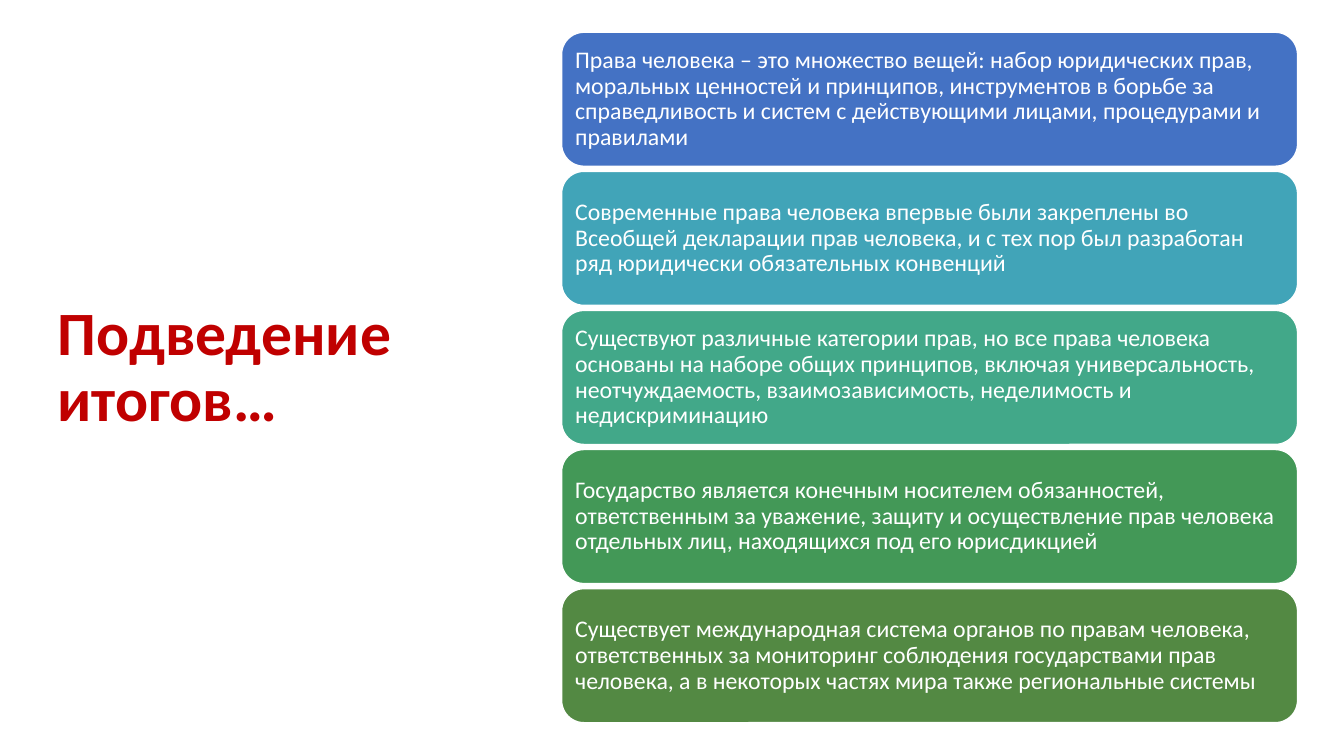
import dataclasses

import pptx
import pptx.dml.color
import pptx.enum.shapes
import pptx.enum.text
import pptx.util

EMU_PER_PX = 9144


@dataclasses.dataclass(frozen=True)
class Theme:
    font: str = "Calibri"
    title_size: int = 44
    card_size: int = 17
    line_spacing: float = 0.9
    title_color: str = "C00000"
    light: str = "FFFFFF"
    card_fills: tuple = ("4472C4", "41A4B8", "42A889", "439857", "538943")


THEME = Theme()
TITLE = "Подведение итогов…"
CONCLUSIONS = (
    "Права человека – это множество вещей: набор юридических прав, моральных ценностей "
    "и принципов, инструментов в борьбе за справедливость и систем с действующими лицами, "
    "процедурами и правилами",
    "Современные права человека впервые были закреплены во Всеобщей декларации прав человека, "
    "и с тех пор был разработан ряд юридически обязательных конвенций",
    "Существуют различные категории прав, но все права человека основаны на наборе общих "
    "принципов, включая универсальность, неотчуждаемость, взаимозависимость, неделимость "
    "и недискриминацию",
    "Государство является конечным носителем обязанностей, ответственным за уважение, защиту "
    "и осуществление прав человека отдельных лиц, находящихся под его юрисдикцией",
    "Существует международная система органов по правам человека, ответственных за мониторинг "
    "соблюдения государствами прав человека, а в некоторых частях мира также региональные системы",
)
CARD_LEFT, CARD_TOP, CARD_WIDTH, CARD_HEIGHT = 557, 32, 730, 133
CARD_PITCH = 138
CARD_INSET = 7


def px(length):
    return pptx.util.Emu(length * EMU_PER_PX)


def rgb(color):
    return pptx.dml.color.RGBColor.from_string(color)


def write_text(shape, text, size, color, bold=False):
    """Fill a shape with one left-aligned, vertically centred paragraph."""
    frame = shape.text_frame
    frame.word_wrap = True
    frame.auto_size = pptx.enum.text.MSO_AUTO_SIZE.NONE
    frame.vertical_anchor = pptx.enum.text.MSO_ANCHOR.MIDDLE
    paragraph = frame.paragraphs[0]
    paragraph.alignment = pptx.enum.text.PP_ALIGN.LEFT
    paragraph.line_spacing = THEME.line_spacing
    run = paragraph.add_run()
    run.text = text
    run.font.name = THEME.font
    run.font.size = pptx.util.Pt(size)
    run.font.bold = bold
    run.font.color.rgb = rgb(color)


def place_title(slide):
    title = slide.shapes.title
    title.left, title.top, title.width, title.height = map(px, (47, 61, 449, 609))
    write_text(title, TITLE, THEME.title_size, THEME.title_color, bold=True)


def add_card(slide, top, text, fill):
    card = slide.shapes.add_shape(
        pptx.enum.shapes.MSO_SHAPE.ROUNDED_RECTANGLE,
        px(CARD_LEFT), px(top), px(CARD_WIDTH), px(CARD_HEIGHT))
    card.shadow.inherit = False
    card.fill.solid()
    card.fill.fore_color.rgb = rgb(fill)
    card.line.color.rgb = rgb(THEME.light)
    card.line.width = pptx.util.Pt(1)
    frame = card.text_frame
    frame.margin_left = frame.margin_right = px(CARD_INSET)
    frame.margin_top = frame.margin_bottom = px(CARD_INSET)
    write_text(card, text, THEME.card_size, THEME.light)


def main():
    presentation = pptx.Presentation()
    presentation.slide_width = px(1333)
    presentation.slide_height = px(750)
    title_only = presentation.slide_layouts.get_by_name("Title Only")
    slide = presentation.slides.add_slide(title_only)
    place_title(slide)
    for index, (text, fill) in enumerate(zip(CONCLUSIONS, THEME.card_fills)):
        add_card(slide, CARD_TOP + index * CARD_PITCH, text, fill)
    presentation.save("out.pptx")


if __name__ == "__main__":
    main()
